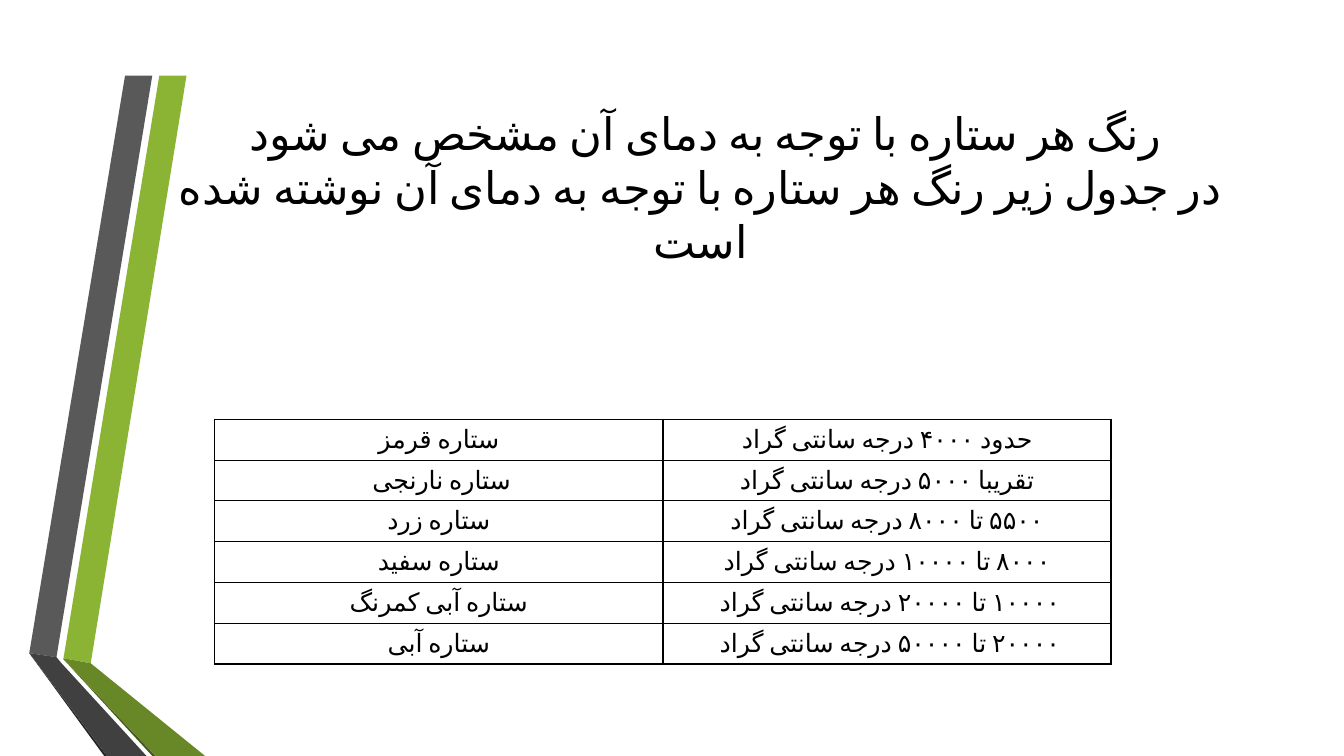
from lxml import etree
from pptx import Presentation
from pptx.dml.color import RGBColor
from pptx.enum.text import MSO_ANCHOR, PP_ALIGN
from pptx.oxml.ns import qn
from pptx.util import Inches, Pt

CENTER = PP_ALIGN.CENTER
TOP = MSO_ANCHOR.TOP
FONT = "Calibri"
COLORS = {
    "text": "000000",
    "green": "8BB434",
    "green_fold": "688727",
    "green_edge": "465A1A",
    "gray": "595959",
    "gray_fold": "404040",
    "gray_edge": "262626",
}

RIBBONS = [
    ("green", [(0.63, 6.53), (0.9, 6.58), (1.85, 0.75), (1.58, 0.75)]),
    ("gray", [(1.51, 0.75), (1.24, 0.75), (0.29, 6.48), (0.56, 6.52)]),
    ("gray_edge", [(0.29, 6.48), (1.58, 8.25), (1.63, 8.25)]),
    ("green_edge", [(0.63, 6.54), (2.2, 8.25), (2.26, 8.25)]),
    ("green_fold", [(0.63, 6.54), (2.26, 8.25), (2.96, 8.25), (0.9, 6.58), (0.63, 6.53)]),
    ("gray_fold", [(2.14, 8.25), (0.61, 6.58), (0.56, 6.52), (0.29, 6.48), (1.63, 8.25)]),
]
TITLE_LINES = [
    "رنگ هر ستاره با توجه به دمای آن مشخص می شود ",
    "در جدول زیر رنگ هر ستاره با توجه به دمای آن نوشته شده است",
]
STARS = [
    ("ستاره قرمز", "حدود ۴۰۰۰ درجه سانتی گراد"),
    ("ستاره نارنجی ", "تقریبا ۵۰۰۰ درجه سانتی گراد"),
    ("ستاره زرد", "۵۵۰۰ تا ۸۰۰۰ درجه سانتی گراد"),
    ("ستاره سفید", "۸۰۰۰ تا ۱۰۰۰۰ درجه سانتی گراد"),
    ("ستاره آبی کمرنگ", "۱۰۰۰۰ تا ۲۰۰۰۰ درجه سانتی گراد "),
    ("ستاره آبی", "۲۰۰۰۰ تا ۵۰۰۰۰ درجه سانتی گراد "),
]


def write_persian(frame, text, size):
    """Write centred right-to-left text; a vertical tab breaks the line."""
    paragraph = frame.paragraphs[0]
    paragraph.text = text
    paragraph.alignment = CENTER
    paragraph._p.get_or_add_pPr().set("rtl", "1")
    for run in paragraph.runs:
        run.font.name = FONT
        run.font.size = Pt(size)
        run.font.color.rgb = RGBColor.from_string(COLORS["text"])
        run_format = run._r.get_or_add_rPr()
        run_format.set("lang", "fa-IR")
        etree.SubElement(run_format, qn("a:cs")).set("typeface", FONT)


def add_borders(cell):
    cell_format = cell._tc.get_or_add_tcPr()
    for position, side in enumerate(("lnL", "lnR", "lnT", "lnB")):
        line = etree.Element(qn(f"a:{side}"), w=str(Pt(1)))
        fill = etree.SubElement(line, qn("a:solidFill"))
        etree.SubElement(fill, qn("a:srgbClr")).set("val", COLORS["text"])
        cell_format.insert(position, line)


prs = Presentation()
prs.slide_width = Inches(13.33)
prs.slide_height = Inches(7.5)
slide = prs.slides.add_slide(prs.slide_layouts[6])

for color, points in RIBBONS:
    corners = [(Inches(x), Inches(y)) for x, y in points]
    builder = slide.shapes.build_freeform(*corners[0])
    builder.add_line_segments(corners[1:], close=True)
    ribbon = builder.convert_to_shape()
    ribbon.shadow.inherit = False
    ribbon.fill.solid()
    ribbon.fill.fore_color.rgb = RGBColor.from_string(COLORS[color])
    ribbon.line.fill.background()

title = slide.shapes.add_textbox(Inches(1.47), Inches(1), Inches(10.96), Inches(2.75))
title.text_frame.word_wrap = True
title.text_frame.vertical_anchor = TOP
write_persian(title.text_frame, "\v".join(TITLE_LINES), 32)

star_table = slide.shapes.add_table(
    len(STARS), 2, Inches(2.13), Inches(4.16), Inches(8.89), Inches(2.43)
).table
star_table.first_row = False
star_table.horz_banding = False
for row, star in enumerate(STARS):
    for column, text in enumerate(star):
        cell = star_table.cell(row, column)
        cell.fill.background()
        add_borders(cell)
        write_persian(cell.text_frame, text, 18)

prs.save("out.pptx")
